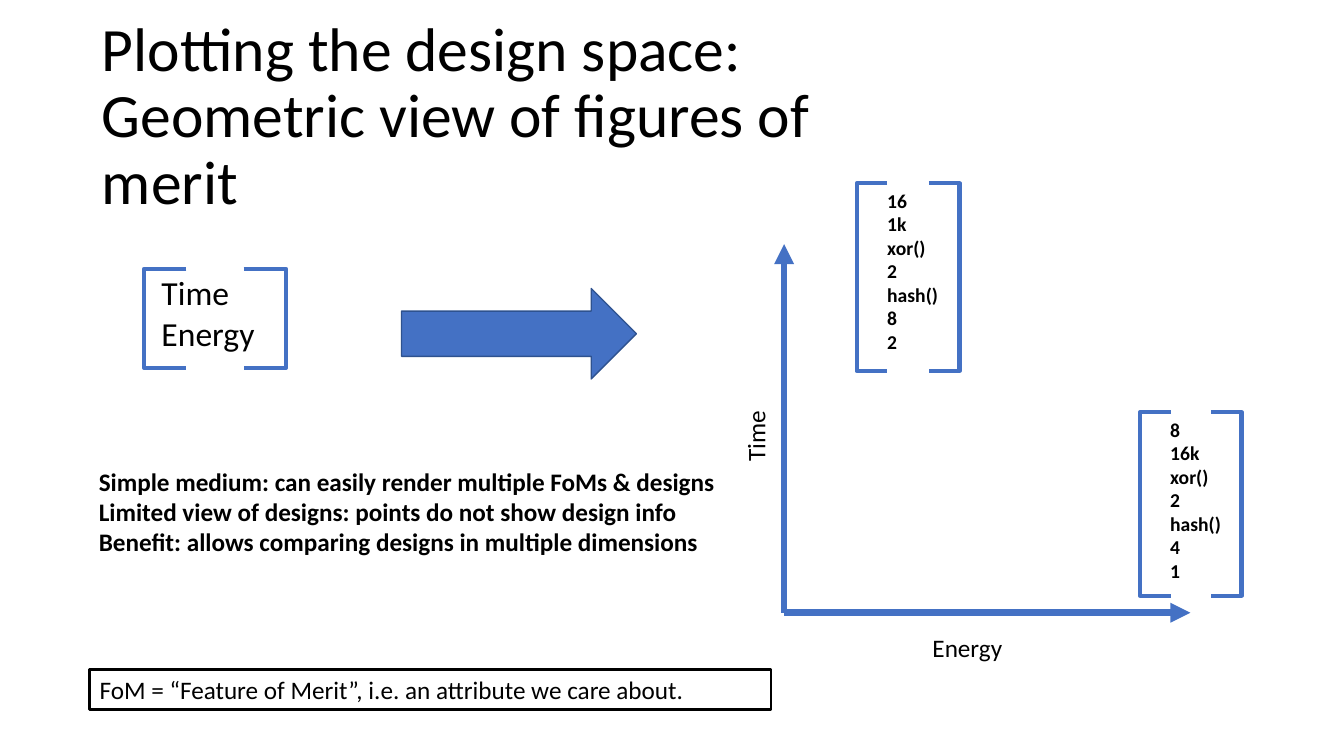
from pptx import Presentation
from pptx.dml.color import RGBColor
from pptx.enum.shapes import MSO_CONNECTOR as Conn, MSO_SHAPE as Kind
from pptx.enum.text import MSO_ANCHOR as Anchor, PP_ALIGN as Align
from pptx.oxml.ns import qn
from pptx.util import Cm, Pt
from lxml.etree import SubElement

BLUE, EDGE, BLACK = "4471C4", "2E528F", "000000"

deck = Presentation()
deck.slide_width, deck.slide_height = Cm(33.87), Cm(19.05)
slide = deck.slides.add_slide(deck.slide_layouts[6])
shapes = slide.shapes


def color(code):
    return RGBColor.from_string(code)


def label(x, y, w, h, lines, size, bold=False, top=0.03):
    """Add a text box with one paragraph per line."""
    box = shapes.add_textbox(Cm(x), Cm(y), Cm(w), Cm(h))
    frame = box.text_frame
    frame.word_wrap = True
    frame.margin_left, frame.margin_top = Cm(0.03), Cm(top)
    frame.margin_right = frame.margin_bottom = 0
    frame.text = "\n".join(lines)
    for para in frame.paragraphs:
        font = para.font
        font.name, font.size, font.bold = "Calibri", Pt(size), bold
        font.color.rgb = color(BLACK)
    return frame


# Title
title = label(2.54, 0.18, 21.46, 3.61,
              ["Plotting the design space: Geometric view of figures of merit"],
              44, top=0.25).paragraphs[0]
title.line_spacing, title.space_before = Pt(47.5), Pt(7)

# Bracketed vectors: left, right, top, bottom, arm length
vectors = [
    (3.63, 7.21, 6.78, 9.27, 1.07),
    (21.59, 24.18, 4.62, 9.35, 0.77),
    (28.73, 31.29, 10.39, 15.01, 0.77),
]
for left, right, top, bottom, arm in vectors:
    for side, tip in ((left, left + arm), (right, right - arm)):
        pen = shapes.build_freeform(Cm(tip), Cm(top))
        pen.add_line_segments([(Cm(side), Cm(top)), (Cm(side), Cm(bottom)),
                               (Cm(tip), Cm(bottom))], close=False)
        half = pen.convert_to_shape()
        half.shadow.inherit = False
        half.fill.background()
        half.line.color.rgb = color(BLUE)
        half.line.width = Pt(3)

label(4.04, 6.83, 2.41, 2.11, ["Time", "Energy"], 24)
label(22.33, 4.72, 1.4, 4.22,
      ["16", "1k", "xor()", "2", "hash()", "8", "2"], 14, True)
label(29.46, 10.49, 1.4, 4.22,
      ["8", "16k", "xor()", "2", "hash()", "4", "1"], 14, True)

# Block arrow from the vector to the plot
arrow = shapes.add_shape(Kind.RIGHT_ARROW, Cm(10.12), Cm(7.27), Cm(5.92), Cm(2.28))
arrow.shadow.inherit = False
arrow.fill.solid()
arrow.fill.fore_color.rgb = color(BLUE)
arrow.line.color.rgb = color(EDGE)
arrow.line.width = Pt(0.96)

# Plot axes
zero = (19.76, 15.44)
for end in ((30, zero[1]), (zero[0], 6.15)):
    axis = shapes.add_connector(Conn.STRAIGHT, *map(Cm, zero + end))
    axis.line.color.rgb = color(BLUE)
    axis.line.width = Pt(4.75)
    SubElement(axis.line._get_or_add_ln(), qn("a:tailEnd"), type="triangle")
    SubElement(axis._element.spPr, qn("a:effectLst"))

time = label(18.75, 10.29, 0.71, 1.35, ["Time"], 18, top=0)
time._txBody.bodyPr.set("vert", "vert270")
time.paragraphs[0].line_spacing = Pt(18.1)
label(23.47, 15.9, 1.9, 0.84, ["Energy"], 18)

# Remarks
label(2.46, 11.71, 16, 2.36, [
    "Simple medium: can easily render multiple FoMs & designs",
    "Limited view of designs: points do not show design info",
    "Benefit: allows comparing designs in multiple dimensions",
], 18, True)

# Definition
note = shapes.add_shape(Kind.RECTANGLE, Cm(2.26), Cm(16.87), Cm(17.17), Cm(1.02))
note.shadow.inherit = False
note.fill.background()
note.line.color.rgb = color(BLACK)
note.line.width = Pt(2)
note.text_frame.vertical_anchor = Anchor.TOP
para = note.text_frame.paragraphs[0]
para.text = "FoM = “Feature of Merit”, i.e. an attribute we care about."
para.alignment = Align.LEFT
para.font.name, para.font.size = "Calibri", Pt(18)
para.font.color.rgb = color(BLACK)

deck.save("out.pptx")
